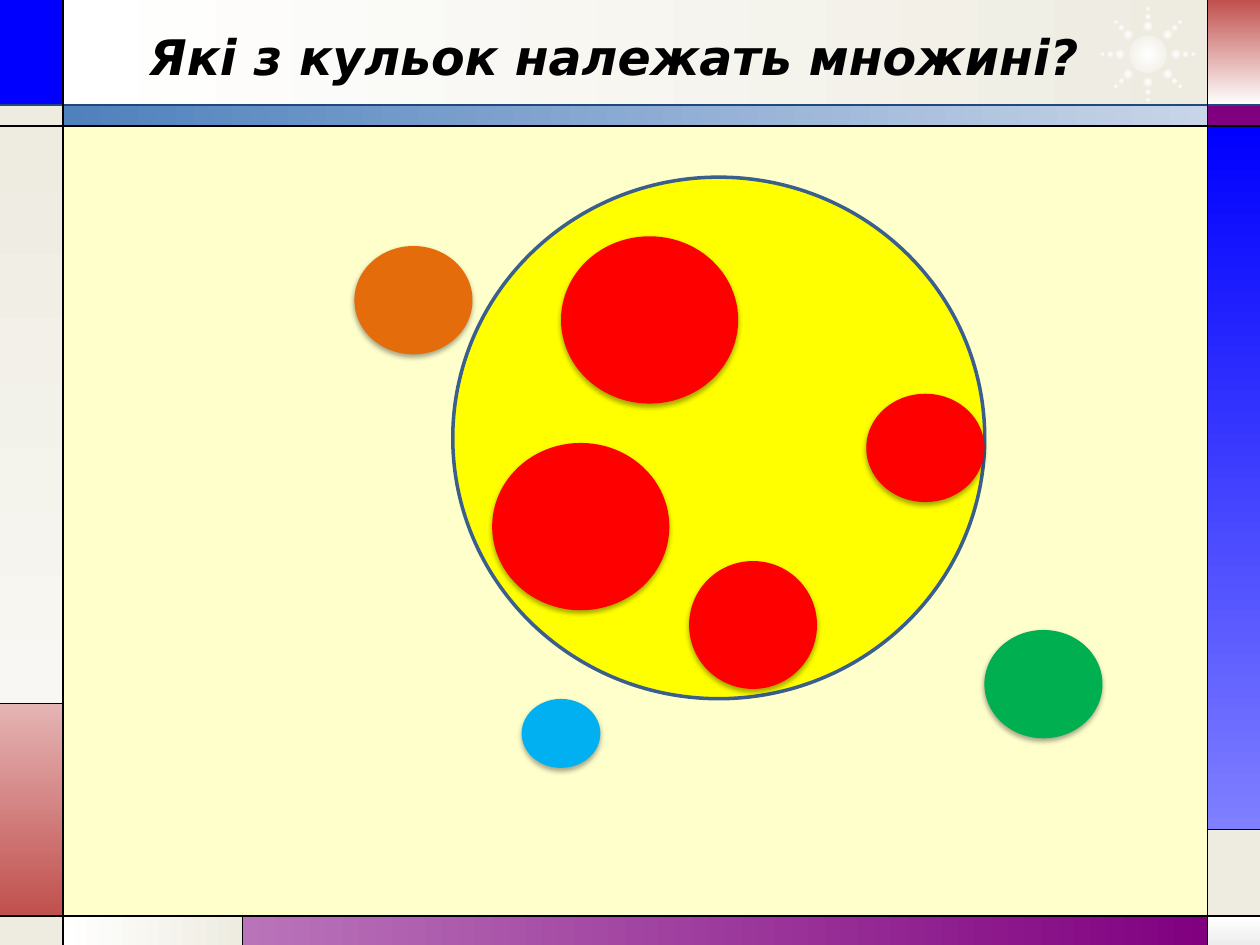
from math import cos, radians, sin

from lxml.etree import SubElement
from pptx import Presentation
from pptx.dml.color import RGBColor
from pptx.enum.shapes import MSO_CONNECTOR as CONN, MSO_SHAPE as SHAPE
from pptx.enum.text import MSO_ANCHOR as ANCHOR, PP_ALIGN as ALIGN
from pptx.oxml.ns import qn
from pptx.util import Pt

FONT = "DejaVu Sans"
CREAM = RGBColor(0xFF, 0xFF, 0xCC)
WHITE = RGBColor(0xFF, 0xFF, 0xFF)
BLACK = RGBColor(0x00, 0x00, 0x00)
IVORY = RGBColor(0xEE, 0xEC, 0xE1)
PALE_IVORY = RGBColor(0xF8, 0xF7, 0xF3)
LIGHT_GREY = RGBColor(0xED, 0xED, 0xED)
BLUE = RGBColor(0x00, 0x00, 0xFF)
LIGHT_BLUE = RGBColor(0x7F, 0x7F, 0xFF)
STEEL = RGBColor(0x4F, 0x81, 0xBD)
PALE_STEEL = RGBColor(0xC8, 0xD5, 0xE8)
NAVY = RGBColor(0x1F, 0x49, 0x7D)
BRICK = RGBColor(0xC0, 0x50, 0x4D)
PALE_BRICK = RGBColor(0xE5, 0xB4, 0xB4)
PURPLE = RGBColor(0x80, 0x00, 0x80)
PALE_PURPLE = RGBColor(0xB9, 0x74, 0xB9)
SET_EDGE = RGBColor(0x3A, 0x5F, 0x8C)
YELLOW = RGBColor(0xFF, 0xFF, 0x00)
RED = RGBColor(0xFF, 0x00, 0x00)
GREEN = RGBColor(0x00, 0xB0, 0x50)
ORANGE = RGBColor(0xE4, 0x6C, 0x0A)
SKY = RGBColor(0x00, 0xB0, 0xF0)

ACROSS, DOWN = 0, 270  # gradient angles, counter-clockwise

# Frame columns and rows
W, H = 720, 540
LEFT, RIGHT = 36, 690
HEAD, BODY, FOOT = 60, 72, 523.5
LEFT_SPLIT, RIGHT_SPLIT, FOOT_SPLIT = 402, 474, 138.5

# left, top, right, bottom, colours, gradient angle
PANELS = [
    (LEFT, 0, RIGHT, HEAD, (WHITE, IVORY), ACROSS),
    (0, 0, LEFT, HEAD, (BLUE,), None),
    (0, HEAD, LEFT, BODY, (IVORY,), None),
    (0, BODY, LEFT, LEFT_SPLIT, (IVORY, PALE_IVORY), DOWN),
    (0, LEFT_SPLIT, LEFT, FOOT, (PALE_BRICK, BRICK), DOWN),
    (0, FOOT, LEFT, H, (IVORY,), None),
    (LEFT, FOOT, FOOT_SPLIT, H, (WHITE, IVORY), ACROSS),
    (FOOT_SPLIT, FOOT, RIGHT, H, (PALE_PURPLE, PURPLE), ACROSS),
    (RIGHT, FOOT, W, H, (WHITE, LIGHT_GREY), DOWN),
    (RIGHT, RIGHT_SPLIT, W, FOOT, (IVORY,), None),
    (RIGHT, BODY, W, RIGHT_SPLIT, (BLUE, LIGHT_BLUE), DOWN),
    (RIGHT, HEAD, W, BODY, (PURPLE,), None),
    (RIGHT, 0, W, HEAD, (BRICK, WHITE), DOWN),
    (LEFT, HEAD, RIGHT, BODY, (STEEL, PALE_STEEL), ACROSS),
]

RULES = [
    (0, HEAD, W, HEAD, NAVY),
    (0, BODY, W, BODY, BLACK),
    (0, FOOT, W, FOOT, BLACK),
    (LEFT, 0, LEFT, H, BLACK),
    (RIGHT, 0, RIGHT, H, BLACK),
    (0, LEFT_SPLIT, LEFT, LEFT_SPLIT, BLACK),
    (FOOT_SPLIT, FOOT, FOOT_SPLIT, H, BLACK),
    (RIGHT, RIGHT_SPLIT, W, RIGHT_SPLIT, BLACK),
]

# left, top, width, height, colour
BALLS = [
    (320.6, 135, 101.25, 95.6, RED),
    (393.75, 320.6, 73.1, 73.1, RED),
    (281.25, 253.1, 101.25, 95.6, RED),
    (495, 225, 67.5, 61.9, RED),
    (562.5, 360, 67.5, 61.9, GREEN),
    (202.5, 140.6, 67.5, 61.9, ORANGE),
    (298.1, 399.4, 45, 39.4, SKY),
]


def add_shape(slide, kind, x, y, w, h, colours, angle=None):
    """Add a borderless shape filled with one colour or a two-colour gradient."""
    sp = slide.shapes.add_shape(kind, Pt(x), Pt(y), Pt(w), Pt(h))
    sp.shadow.inherit = False
    sp.line.fill.background()
    if len(colours) == 1:
        sp.fill.solid()
        sp.fill.fore_color.rgb = colours[0]
    else:
        sp.fill.gradient()
        for i, (stop, colour) in enumerate(zip(sp.fill.gradient_stops, colours)):
            stop.position = i
            stop.color.rgb = colour
        if angle is not None:
            sp.fill.gradient_angle = angle
    return sp


def add_rule(slide, x1, y1, x2, y2, colour):
    line = slide.shapes.add_connector(CONN.STRAIGHT, Pt(x1), Pt(y1), Pt(x2), Pt(y2))
    line.line.color.rgb = colour
    line.line.width = Pt(0.75)
    SubElement(line.element.spPr, qn("a:effectLst"))


def add_spark(slide, cx, cy, size):
    """Add a dot that glows from its centre."""
    sp = add_shape(slide, SHAPE.OVAL, cx - size / 2, cy - size / 2, size, size,
                   (WHITE, IVORY))
    grad = sp.element.spPr.find(qn("a:gradFill"))
    grad.remove(grad.find(qn("a:lin")))
    glow = SubElement(grad, qn("a:path"), path="circle")
    SubElement(glow, qn("a:fillToRect"), l="50000", t="50000", r="50000", b="50000")


def add_star(slide, cx, cy):
    add_spark(slide, cx, cy, 21.6)
    for ray in range(8):
        a = radians(45 * ray)
        for radius, size in ((16, 5.4), (21.5, 3.4), (26, 2.5)):
            add_spark(slide, cx + radius * cos(a), cy + radius * sin(a), size)


def add_ball(slide, x, y, w, h, colour):
    sp = add_shape(slide, SHAPE.OVAL, x, y, w, h, (colour,))
    effects = sp.element.spPr.find(qn("a:effectLst"))
    shadow = SubElement(effects, qn("a:outerShdw"), blurRad=str(Pt(3.1)),
                        dist=str(Pt(1.8)), dir="5400000", rotWithShape="0")
    tint = SubElement(shadow, qn("a:srgbClr"), val=str(BLACK))
    SubElement(tint, qn("a:alpha"), val="35000")


def set_title(slide, text):
    title = slide.shapes.title
    title.left, title.top, title.width, title.height = Pt(78), Pt(9.5), Pt(608), Pt(44.5)
    title.element.getparent().append(title.element)  # in front of the frame
    tf = title.text_frame
    tf.text = text
    tf.vertical_anchor = ANCHOR.MIDDLE
    p = tf.paragraphs[0]
    p.alignment = ALIGN.LEFT
    font = p.runs[0].font
    font.name, font.size = FONT, Pt(28)
    font.bold = font.italic = True
    font.color.rgb = BLACK


def main():
    prs = Presentation()
    prs.slide_width, prs.slide_height = Pt(W), Pt(H)
    slide = prs.slides.add_slide(prs.slide_layouts[5])
    slide.background.fill.solid()
    slide.background.fill.fore_color.rgb = CREAM

    # Frame of coloured panels, star and rules
    for x1, y1, x2, y2, colours, angle in PANELS:
        add_shape(slide, SHAPE.RECTANGLE, x1, y1, x2 - x1, y2 - y1, colours, angle)
    add_star(slide, 656, 31)
    for rule in RULES:
        add_rule(slide, *rule)

    set_title(slide, "Які з кульок належать множині?")

    # The set and the balls
    circle = add_shape(slide, SHAPE.OVAL, 258.75, 101.25, 304, 298, (YELLOW,))
    circle.line.color.rgb = SET_EDGE
    circle.line.width = Pt(2)
    for ball in BALLS:
        add_ball(slide, *ball)

    prs.save("out.pptx")


if __name__ == "__main__":
    main()
